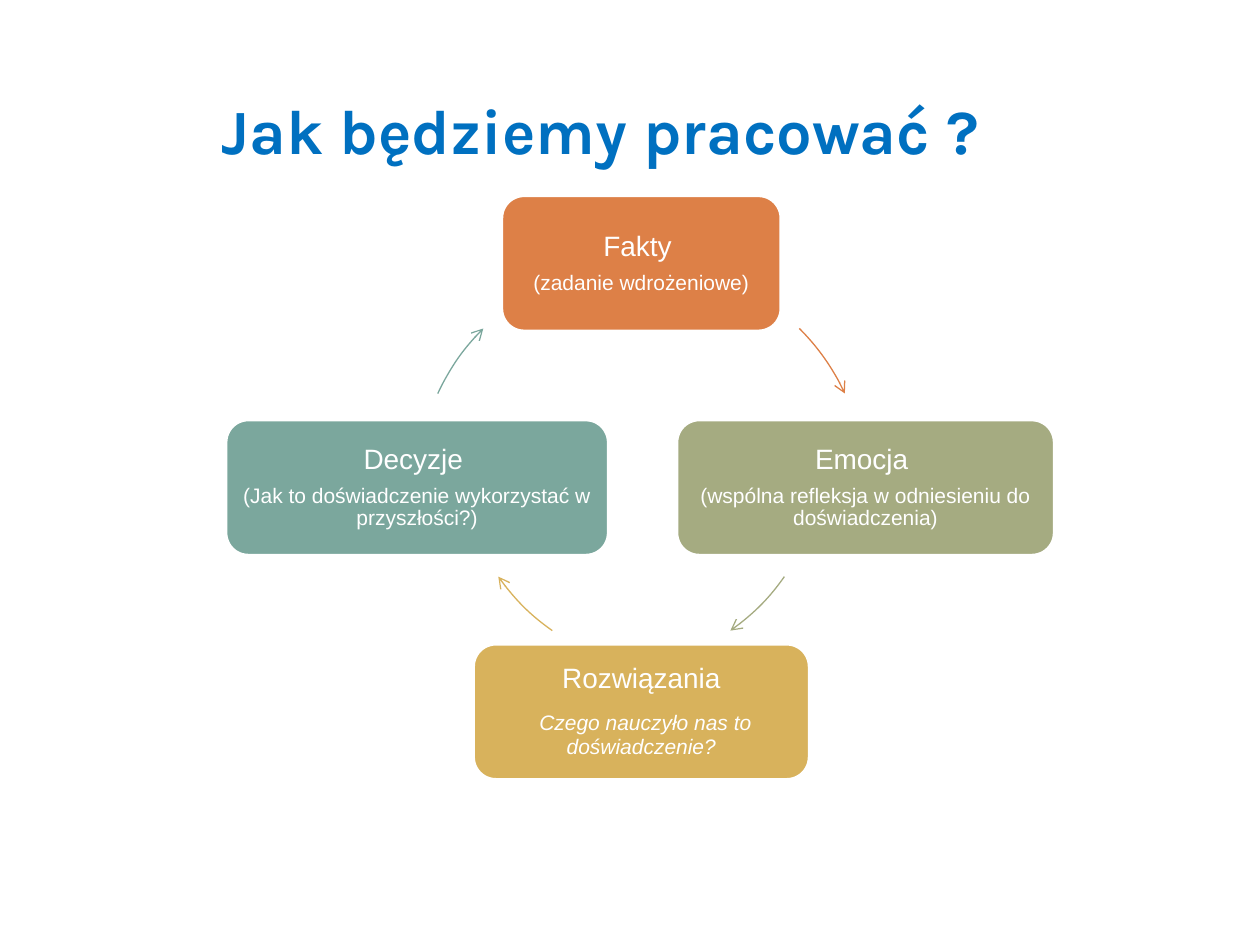
from dataclasses import dataclass
from math import cos, radians, sin

from lxml import etree
from pptx import Presentation
from pptx.dml.color import RGBColor
from pptx.enum.shapes import MSO_SHAPE
from pptx.enum.text import MSO_ANCHOR, PP_ALIGN
from pptx.oxml.ns import qn
from pptx.util import Cm, Pt

WHITE = RGBColor(0xFF, 0xFF, 0xFF)
BLUE = RGBColor(0x00, 0x70, 0xC0)
ORANGE = RGBColor(0xDD, 0x80, 0x47)
OLIVE = RGBColor(0xA5, 0xAB, 0x81)
GOLD = RGBColor(0xD8, 0xB2, 0x5C)
TEAL = RGBColor(0x7B, 0xA7, 0x9D)

STAGE_HEIGHT = 2.74
ARC_SHIFT = 0.81  # lower arrows sit on circles moved off the ring's centre


@dataclass
class Stage:
    heading: str
    detail: str
    color: RGBColor
    width: float
    arc_start: float
    arc_end: float
    arc_dx: float = 0
    arc_dy: float = 0
    is_question: bool = False


# Clockwise from the top
STAGES = [
    Stage("Fakty ", "(zadanie wdrożeniowe)", ORANGE, 5.64, 314.8, 335.2),
    Stage("Emocja ", "(wspólna refleksja w odniesieniu do doświadczenia)",
          OLIVE, 7.62, 35.2, 54.8, -ARC_SHIFT, -ARC_SHIFT),
    Stage("Rozwiązania", "Czego nauczyło nas to doświadczenie?",
          GOLD, 6.78, 125.2, 144.8, ARC_SHIFT, -ARC_SHIFT, is_question=True),
    Stage("Decyzje ", "(Jak to doświadczenie wykorzystać w przyszłości?)",
          TEAL, 7.72, 204.8, 225.2),
]


def add_title(slide, left, top, width, height):
    frame = slide.shapes.add_textbox(Cm(left), Cm(top), Cm(width), Cm(height)).text_frame
    frame.word_wrap = True
    heading = frame.paragraphs[0]
    heading.text = "Jak będziemy pracować ?"
    heading.alignment = PP_ALIGN.CENTER
    heading.font.name = "Karla"
    heading.font.size = Pt(36)
    heading.font.bold = True
    heading.font.color.rgb = BLUE


def format_line(paragraph, size):
    paragraph.alignment = PP_ALIGN.CENTER
    paragraph.line_spacing = 0.9
    paragraph.space_after = Pt(size * 0.35)
    paragraph.font.name = "Arial"
    paragraph.font.size = Pt(size)
    paragraph.font.color.rgb = WHITE


def add_stage(slide, stage, center_x, center_y):
    card = slide.shapes.add_shape(
        MSO_SHAPE.ROUNDED_RECTANGLE,
        Cm(center_x - stage.width / 2), Cm(center_y - STAGE_HEIGHT / 2),
        Cm(stage.width), Cm(STAGE_HEIGHT))
    card.shadow.inherit = False
    card.fill.solid()
    card.fill.fore_color.rgb = stage.color
    card.line.color.rgb = WHITE
    card.line.width = Pt(2)

    frame = card.text_frame
    frame.word_wrap = True
    frame.vertical_anchor = MSO_ANCHOR.MIDDLE
    frame.margin_left = frame.margin_right = Cm(0.17)
    frame.margin_top = frame.margin_bottom = Cm(0.17)
    heading = frame.paragraphs[0]
    heading.text = stage.heading
    format_line(heading, 16)
    detail = frame.add_paragraph()
    format_line(detail, 12)
    if stage.is_question:
        lead = detail.add_run()
        lead.text = " "
        lead.font.size = Pt(17)
    wording = detail.add_run()
    wording.text = stage.detail
    if stage.is_question:
        wording.font.italic = True


def add_arc_arrow(slide, stage, center_x, center_y, radius):
    """Draw the arrow that leads clockwise from this stage to the next."""
    arc = slide.shapes.add_shape(
        MSO_SHAPE.ARC,
        Cm(center_x + stage.arc_dx - radius), Cm(center_y + stage.arc_dy - radius),
        Cm(2 * radius), Cm(2 * radius))
    arc.shadow.inherit = False
    arc.fill.background()
    # Angles are stored in 1/60000 degree, adjustments in 1/100000
    arc.adjustments[0] = stage.arc_start * 0.6
    arc.adjustments[1] = stage.arc_end * 0.6
    arc.line.color.rgb = stage.color
    arc.line.width = Pt(0.75)
    etree.SubElement(arc.line._get_or_add_ln(), qn("a:tailEnd"), type="arrow")


def add_cycle(slide, left, top, diameter):
    """Place the stage centres evenly on the circle inscribed in the given box."""
    radius = diameter / 2
    center_x, center_y = left + radius, top + radius
    for index, stage in enumerate(STAGES):
        angle = radians(360 / len(STAGES) * index - 90)
        add_stage(slide, stage, center_x + radius * cos(angle), center_y + radius * sin(angle))
        add_arc_arrow(slide, stage, center_x, center_y, radius)


def main():
    presentation = Presentation()
    presentation.slide_width = Cm(25.4)
    presentation.slide_height = Cm(19.05)
    slide = presentation.slides.add_slide(presentation.slide_layouts[6])
    add_cycle(slide, left=8.41, top=5.31, diameter=9.04)
    add_title(slide, left=3.71, top=1.73, width=16.79, height=1.8)
    presentation.save("out.pptx")


if __name__ == "__main__":
    main()
